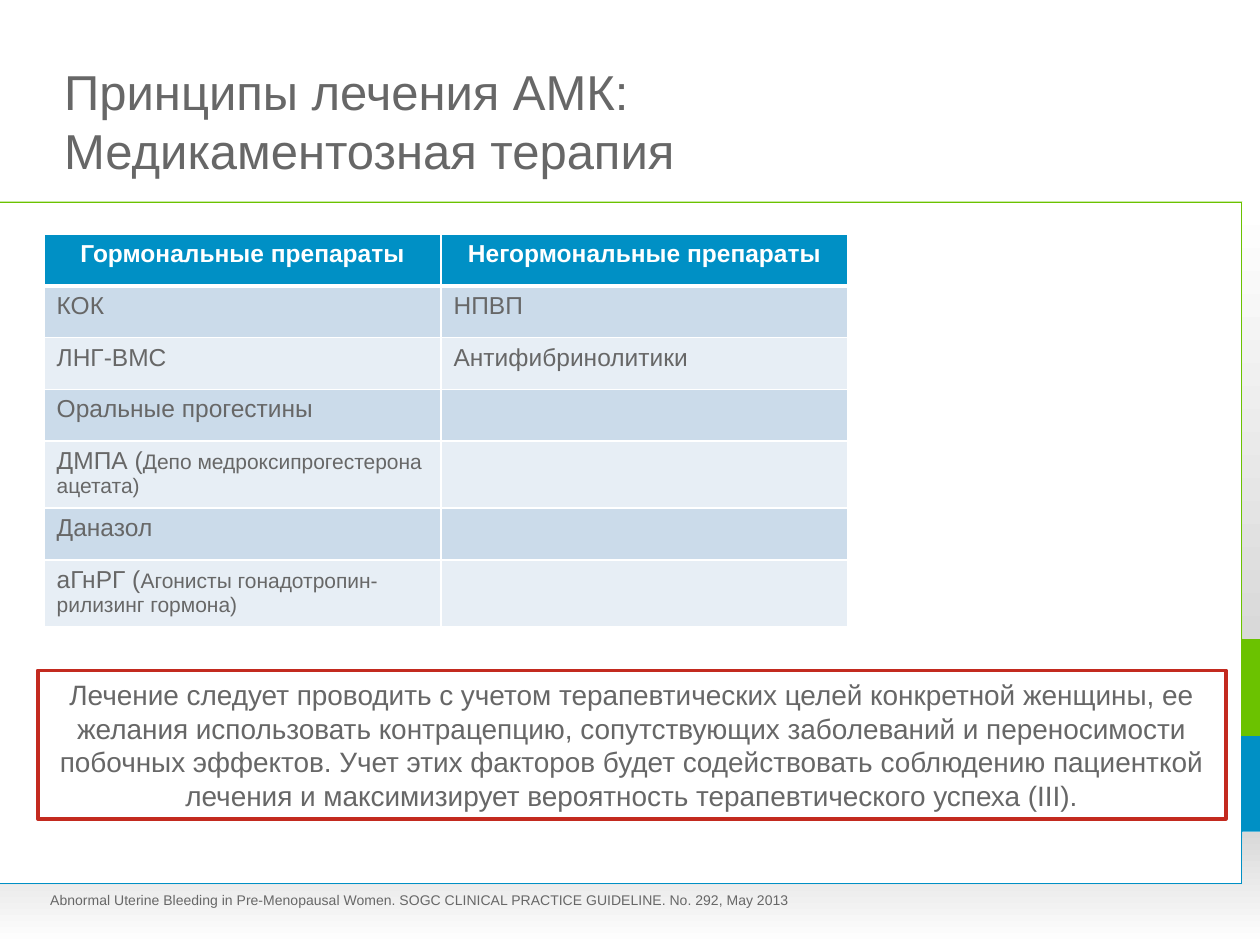
from lxml import etree
from pptx import Presentation
from pptx.dml.color import RGBColor
from pptx.enum.shapes import MSO_SHAPE as Shape
from pptx.enum.text import MSO_ANCHOR as Anchor, PP_ALIGN as Align
from pptx.oxml.ns import qn
from pptx.util import Inches, Pt

WHITE = RGBColor(0xFF, 0xFF, 0xFF)
GREY = RGBColor(0x67, 0x67, 0x67)
SILVER = RGBColor(0xD9, 0xD9, 0xD9)
GREEN = RGBColor(0x6B, 0xC2, 0x00)
BLUE = RGBColor(0x00, 0x90, 0xC5)
RED = RGBColor(0xC3, 0x2A, 0x1F)
BANDS = RGBColor(0xCB, 0xDB, 0xEA), RGBColor(0xE7, 0xEE, 0xF5)

TITLE = ("Принципы лечения АМК:", "Медикаментозная терапия")
HEADS = ("Гормональные препараты", "Негормональные препараты")
# Each row: drug, explanation in small type, non-hormonal drug
DRUGS = [
    ("КОК", "", "НПВП"),
    ("ЛНГ-ВМС", "", "Антифибринолитики"),
    ("Оральные прогестины", "", ""),
    ("ДМПА (", "Депо медроксипрогестерона ацетата)", ""),
    ("Даназол", "", ""),
    ("аГнРГ (", "Агонисты гонадотропин-рилизинг гормона)", ""),
]
SOURCE = ("Abnormal Uterine Bleeding in Pre-Menopausal Women. "
          "SOGC CLINICAL PRACTICE GUIDELINE. No. 292, May 2013")
ADVICE = ("Лечение следует проводить с учетом терапевтических целей конкретной "
          "женщины, ее желания использовать контрацепцию, сопутствующих "
          "заболеваний и переносимости побочных эффектов. Учет этих факторов "
          "будет содействовать соблюдению пациенткой лечения и максимизирует "
          "вероятность терапевтического успеха (III).")


def write(para, text, size, color=GREY, bold=False):
    run = para.add_run()
    run.text = text
    form = {"name": "Arial", "size": Pt(size), "bold": bold}
    for key, value in form.items():
        setattr(run.font, key, value)
    run.font.color.rgb = color


def add_text(slide, box, **form):
    frame = slide.shapes.add_textbox(*map(Inches, box)).text_frame
    for key, value in {"word_wrap": True, **form}.items():
        setattr(frame, key, value)
    return frame.paragraphs[0]


def add_rect(slide, box):
    rect = slide.shapes.add_shape(Shape.RECTANGLE, *map(Inches, box))
    rect.shadow.inherit = False
    return rect


def add_free(slide, points):
    start, *rest = [(Inches(x), Inches(y)) for x, y in points]
    pen = slide.shapes.build_freeform(*start)
    pen.add_line_segments(rest, close=True)
    shape = pen.convert_to_shape()
    shape.shadow.inherit = False
    return shape


def paint(shape, color):
    shape.fill.solid()
    shape.fill.fore_color.rgb = color
    shape.line.fill.background()


def fade(shape, angle):
    shape.fill.gradient()
    shape.fill.gradient_angle = angle
    for stop, color in zip(shape.fill.gradient_stops, (SILVER, WHITE)):
        stop.color.rgb = color
    shape.line.fill.background()


def edge(cell, **widths):
    props = cell._tc.get_or_add_tcPr()
    for i, side in enumerate("LRTB"):
        line = etree.Element(qn("a:ln" + side), w=str(Pt(widths.get(side, 1))))
        fill = etree.SubElement(line, qn("a:solidFill"))
        etree.SubElement(fill, qn("a:srgbClr"), val=str(WHITE))
        props.insert(i, line)


def fill_cell(cell, color, **widths):
    cell.fill.solid()
    cell.fill.fore_color.rgb = color
    edge(cell, **widths)
    return cell.text_frame.paragraphs[0]


def add_drugs(slide):
    count = len(DRUGS) + 1
    box = map(Inches, (0.35, 1.86, 6.38, 0.41 * count))
    table = slide.shapes.add_table(count, 2, *box).table
    for col, width in zip(table.columns, (3.15, 3.23)):
        col.width = Inches(width)
    for i, head in enumerate(HEADS):
        para = fill_cell(table.cell(0, i), BLUE, B=3)
        para.alignment = Align.CENTER
        write(para, head, 14, WHITE, True)
    for r, (drug, note, other) in enumerate(DRUGS, 1):
        top = 3 if r == 1 else 1
        left, right = [fill_cell(table.cell(r, c), BANDS[(r - 1) % 2], T=top)
                       for c in range(2)]
        write(left, drug, 14)
        if note:
            write(left, note, 12)
        if other:
            write(right, other, 14)


def add_frame(slide):
    # Blue corner, footer fade, green corner, side fade
    paint(add_free(slide, [(10, 5.83), (9.85, 5.83), (9.85, 7.01), (0, 7.01),
                           (0, 7.02), (9.86, 7.02), (9.86, 6.6), (10, 6.6)]), BLUE)
    fade(add_free(slide, [(10, 7.5), (10, 6.6), (9.86, 6.6), (9.86, 7.02),
                          (0, 7.02), (0, 7.5)]), 270)
    paint(add_free(slide, [(9.86, 5.07), (9.86, 1.6), (0, 1.6), (0, 1.61),
                           (9.85, 1.61), (9.85, 5.84), (10, 5.84), (10, 5.07)]), GREEN)
    fade(add_rect(slide, (9.86, 1.6, 0.14, 3.47)), 90)


def add_advice(slide):
    rect = add_rect(slide, (0.3, 5.32, 9.43, 1.18))
    paint(rect, WHITE)
    rect.line.color.rgb = RED
    rect.line.width = Pt(2)
    rect.text_frame.word_wrap = True
    para = rect.text_frame.paragraphs[0]
    para.alignment = Align.CENTER
    write(para, ADVICE, 16)


def main():
    deck = Presentation()
    deck.slide_width, deck.slide_height = Inches(10), Inches(7.5)
    slide = deck.slides.add_slide(deck.slide_layouts[6])
    add_frame(slide)

    # Title
    sides = ("left", "right", "top", "bottom")
    bare = {"margin_" + side: 0 for side in sides}
    para = add_text(slide, (0.51, 0.38, 7.72, 1.04),
                    vertical_anchor=Anchor.BOTTOM, **bare)
    write(para, TITLE[0], 28)
    para.add_line_break()
    write(para, TITLE[1], 28)

    # Table, source and advice
    add_drugs(slide)
    write(add_text(slide, (0.3, 7.03, 6.99, 0.24)), SOURCE, 8)
    add_advice(slide)
    deck.save("out.pptx")


if __name__ == "__main__":
    main()
